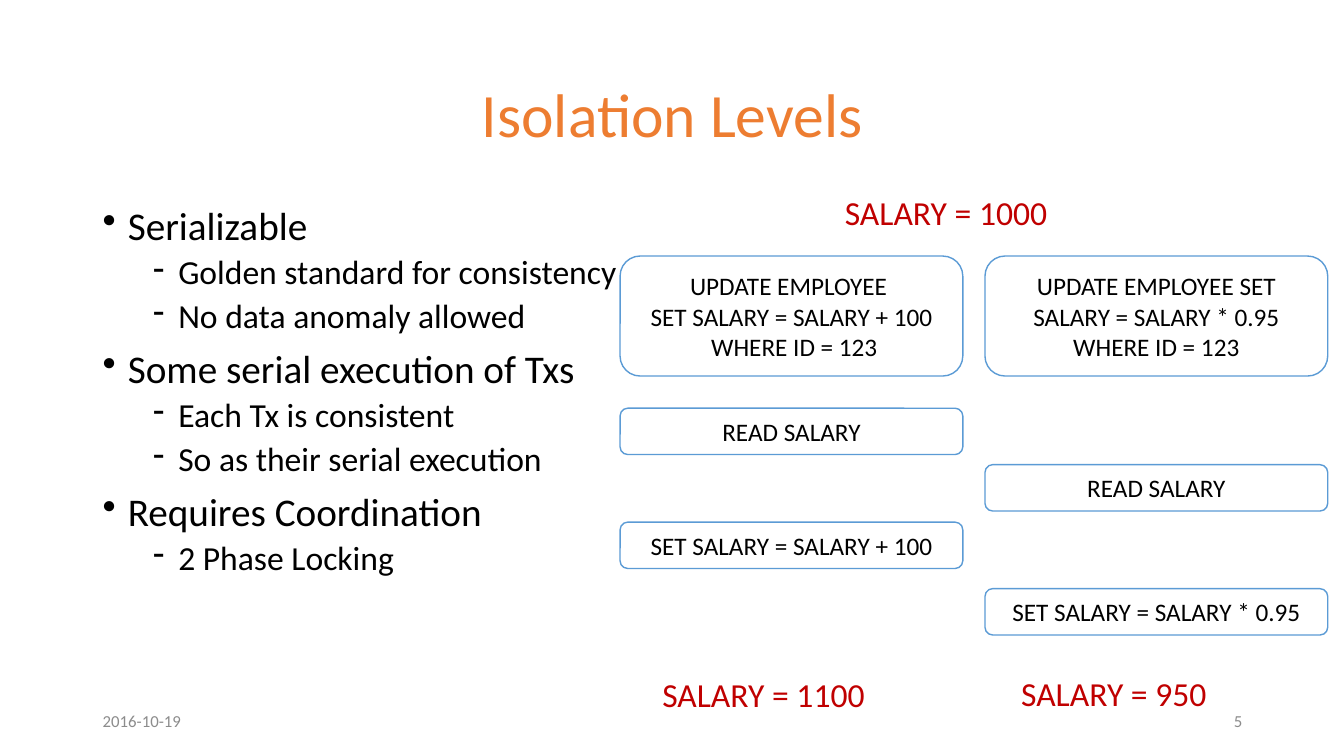
"""Build the isolation levels slide with two interleaved transactions."""
from dataclasses import dataclass

import pptx
import pptx.dml.color
import pptx.enum.shapes
import pptx.enum.text
import pptx.oxml.ns
import pptx.shapes.base
import pptx.slide
import pptx.util
from lxml import etree

SLIDE_WIDTH = pptx.util.Inches(13.33)
SLIDE_HEIGHT = pptx.util.Inches(7.5)
COLUMN = SLIDE_WIDTH / 100
ROW = SLIDE_HEIGHT / 100

FONT = "Calibri"
ORANGE = pptx.dml.color.RGBColor(0xED, 0x7D, 0x31)
BLACK = pptx.dml.color.RGBColor(0x00, 0x00, 0x00)
WHITE = pptx.dml.color.RGBColor(0xFF, 0xFF, 0xFF)
GREY = pptx.dml.color.RGBColor(0x8C, 0x8C, 0x8C)
BLUE = pptx.dml.color.RGBColor(0x5B, 0x9B, 0xD5)
RED = pptx.dml.color.RGBColor(0xC0, 0x00, 0x00)

LEFT = pptx.enum.text.PP_ALIGN.LEFT
CENTER = pptx.enum.text.PP_ALIGN.CENTER
RIGHT = pptx.enum.text.PP_ALIGN.RIGHT
TOP = pptx.enum.text.MSO_ANCHOR.TOP
MIDDLE = pptx.enum.text.MSO_ANCHOR.MIDDLE

LANE_LEFT = 46.14
LANE_PITCH = 27.15
LANE_WIDTH = 25.5
STATEMENT_ROWS = 15.87
STEP_ROWS = 6.13


@dataclass(frozen=True)
class Area:
    """A rectangle in grid columns and rows."""
    left: float
    top: float
    width: float
    height: float

    def lengths(self) -> tuple[int, int, int, int]:
        """Give left, top, width and height as slide lengths."""
        return (round(self.left * COLUMN), round(self.top * ROW),
                round(self.width * COLUMN), round(self.height * ROW))


@dataclass(frozen=True)
class Label:
    """A line of plain text."""
    text: str
    area: Area
    size: float
    color: pptx.dml.color.RGBColor
    align: pptx.enum.text.PP_ALIGN = LEFT
    anchor: pptx.enum.text.MSO_ANCHOR = MIDDLE


@dataclass(frozen=True)
class Operation:
    """A rounded box in one transaction's lane."""
    text: str
    lane: int
    top: float
    height: float = STEP_ROWS


@dataclass(frozen=True)
class BulletStyle:
    """The look of one outline level."""
    mark: str
    size: float
    margin: float
    before: float


LEVELS = (BulletStyle("•", 28, 0.25, 10), BulletStyle("-", 24, 0.75, 5))
HANGING = pptx.util.Inches(0.25)

OUTLINE = (
    (0, "Serializable"),
    (1, "Golden standard for consistency"),
    (1, "No data anomaly allowed"),
    (0, "Some serial execution of Txs"),
    (1, "Each Tx is consistent"),
    (1, "So as their serial execution"),
    (0, "Requires Coordination"),
    (1, "2 Phase Locking"),
)
OUTLINE_AREA = Area(6.9, 26.67, 86.27, 63.47)

LABELS = (
    Label("Isolation Levels", Area(6.9, 5.33, 86.27, 19.33), 44, ORANGE, CENTER),
    Label("2016-10-19", Area(6.9, 92.67, 22.5, 5.33), 12, GREY),
    Label("5", Area(70.67, 92.67, 22.5, 5.33), 12, GREY, RIGHT),
    Label("SALARY = 1000", Area(62.12, 24.67, 17.1, 6.67), 24, RED, anchor=TOP),
    Label("SALARY = 1100", Area(48.54, 88.53, 17.1, 6.67), 24, RED, anchor=TOP),
    Label("SALARY = 950", Area(75.24, 88.4, 17.1, 6.67), 24, RED, anchor=TOP),
)

OPERATIONS = (
    Operation("UPDATE EMPLOYEE \nSET SALARY = SALARY + 100\n WHERE ID = 123",
              0, 33.87, STATEMENT_ROWS),
    Operation("UPDATE EMPLOYEE SET SALARY = SALARY * 0.95\nWHERE ID = 123",
              1, 33.87, STATEMENT_ROWS),
    Operation("READ SALARY", 0, 54),
    Operation("READ SALARY", 1, 61.47),
    Operation("SET SALARY = SALARY + 100", 0, 69.07),
    Operation("SET SALARY = SALARY * 0.95", 1, 77.87),
)


def format_spans(para, size: float, color: pptx.dml.color.RGBColor) -> None:
    """Set font, size and colour on every span of a paragraph."""
    for span in para.runs:
        span.font.name = FONT
        span.font.size = pptx.util.Pt(size)
        span.font.color.rgb = color


def fill_text(box: pptx.shapes.base.BaseShape, label: Label) -> None:
    """Write a label's text into a box."""
    frame = box.text_frame
    frame.word_wrap = True
    frame.vertical_anchor = label.anchor
    frame.text = label.text
    for para in frame.paragraphs:
        para.alignment = label.align
        format_spans(para, label.size, label.color)


def add_label(page: pptx.slide.Slide, label: Label) -> None:
    """Place a text box holding a label."""
    fill_text(page.shapes.add_textbox(*label.area.lengths()), label)


def add_operation(page: pptx.slide.Slide, operation: Operation) -> None:
    """Draw a rounded operation box in its lane."""
    area = Area(LANE_LEFT + operation.lane * LANE_PITCH, operation.top,
                LANE_WIDTH, operation.height)
    box = page.shapes.add_shape(
        pptx.enum.shapes.MSO_SHAPE.ROUNDED_RECTANGLE, *area.lengths())
    box.shadow.inherit = False
    box.fill.solid()
    box.fill.fore_color.rgb = WHITE
    box.line.color.rgb = BLUE
    box.line.width = pptx.util.Pt(1)
    fill_text(box, Label(operation.text, area, 18, BLACK, CENTER))


def add_outline(page: pptx.slide.Slide) -> None:
    """Write the two-level bulleted outline."""
    frame = page.shapes.add_textbox(*OUTLINE_AREA.lengths()).text_frame
    frame.word_wrap = True
    frame.text = "\n".join(text for _, text in OUTLINE)
    for para, (level, _) in zip(frame.paragraphs, OUTLINE):
        style = LEVELS[level]
        para.level = level
        para.line_spacing = 0.9
        para.space_before = pptx.util.Pt(style.before)
        format_spans(para, style.size, BLACK)
        properties = para._p.get_or_add_pPr()
        properties.set("marL", str(pptx.util.Inches(style.margin)))
        properties.set("indent", str(-HANGING))
        bullet = etree.SubElement(properties, pptx.oxml.ns.qn("a:buChar"))
        bullet.set("char", style.mark)


def main() -> None:
    """Build and save the deck."""
    deck = pptx.Presentation()
    deck.slide_width = SLIDE_WIDTH
    deck.slide_height = SLIDE_HEIGHT
    page = deck.slides.add_slide(deck.slide_layouts[6])
    add_outline(page)
    for operation in OPERATIONS:
        add_operation(page, operation)
    for label in LABELS:
        add_label(page, label)
    deck.save("out.pptx")


if __name__ == "__main__":
    main()
